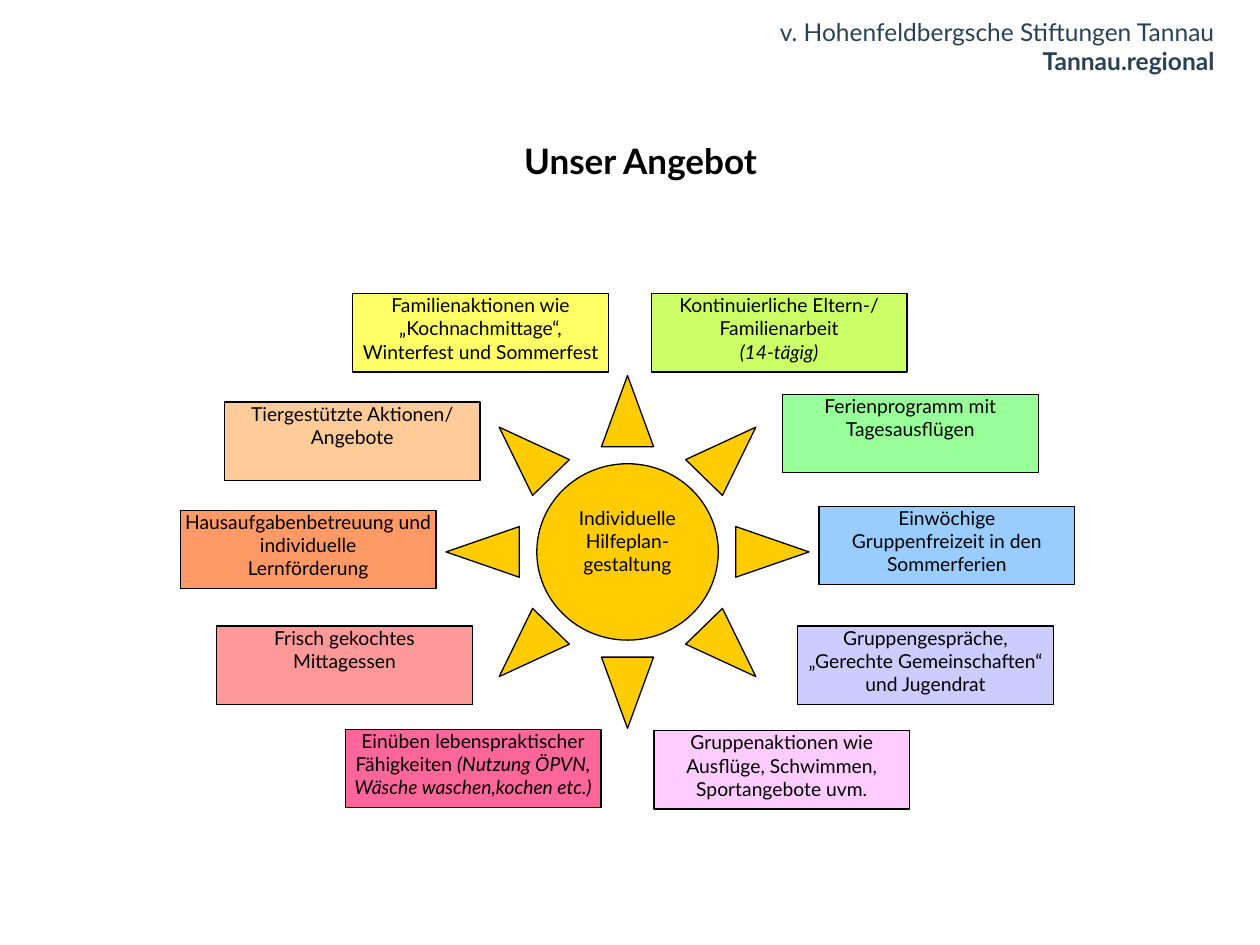
import pptx
import pptx.util
import pptx.dml.color
import pptx.enum.shapes
import pptx.enum.text
from dataclasses import dataclass

Pt = pptx.util.Pt
RGB = pptx.dml.color.RGBColor.from_string
SHAPE = pptx.enum.shapes.MSO_SHAPE
ALIGN = pptx.enum.text.PP_ALIGN
ANCHOR = pptx.enum.text.MSO_ANCHOR


@dataclass(frozen=True)
class Theme:
    font: str = "Lato"
    ink: str = "000000"
    header: str = "284156"
    sun: str = "FFCC00"
    title_size: int = 20
    header_size: int = 14
    body_size: int = 11
    line_width: float = 0.75


class Deck:
    def __init__(self, theme):
        self.theme = theme
        self.prs = pptx.Presentation()
        self.prs.slide_width, self.prs.slide_height = Pt(720), Pt(540)
        self.s = self.prs.slides.add_slide(self.prs.slide_layouts[5])

    def frame(self, sp, anchor):
        tf = sp.text_frame
        tf.word_wrap = True
        tf.auto_size = pptx.enum.text.MSO_AUTO_SIZE.NONE
        tf.margin_left = tf.margin_right = tf.margin_top = tf.margin_bottom = 0
        tf.vertical_anchor = anchor
        return tf

    def style(self, p, size, color, align):
        p.alignment = align
        p.font.name = self.theme.font
        p.font.size = Pt(size)
        p.font.color.rgb = RGB(color)

    def title(self, text, x, y, w, h):
        sp = self.s.shapes.title
        sp.left, sp.top, sp.width, sp.height = Pt(x), Pt(y), Pt(w), Pt(h)
        p = self.frame(sp, ANCHOR.BOTTOM).paragraphs[0]
        p.text = text
        self.style(p, self.theme.title_size, self.theme.ink, ALIGN.CENTER)
        p.font.bold = True

    def header(self, name, division, x, y, w, h):
        sp = self.s.shapes.add_textbox(Pt(x), Pt(y), Pt(w), Pt(h))
        p = self.frame(sp, ANCHOR.BOTTOM).paragraphs[0]
        self.style(p, self.theme.header_size, self.theme.header, ALIGN.RIGHT)
        p.add_run().text = name
        p.add_line_break()
        r = p.add_run()
        r.text = division
        r.font.bold = True

    def shape(self, kind, fill, x, y, w, h, outlined=True):
        sp = self.s.shapes.add_shape(kind, Pt(x), Pt(y), Pt(w), Pt(h))
        sp.shadow.inherit = False
        sp.fill.solid()
        sp.fill.fore_color.rgb = RGB(fill)
        if outlined:
            sp.line.color.rgb = RGB(self.theme.ink)
            sp.line.width = Pt(self.theme.line_width)
        else:
            sp.line.fill.background()
        return sp

    def label(self, lines, fill, x, y, w, h, outlined=True):
        sp = self.shape(SHAPE.RECTANGLE, fill, x, y, w, h, outlined)
        tf = self.frame(sp, ANCHOR.TOP)
        for i, line in enumerate(lines):
            p = tf.add_paragraph() if i else tf.paragraphs[0]
            self.style(p, self.theme.body_size, self.theme.ink, ALIGN.CENTER)
            plain, _, italic = line.partition("|")
            if plain:
                p.add_run().text = plain
            if italic:
                r = p.add_run()
                r.text = italic
                r.font.italic = True


BOX_SIZE = (146.2, 44.8)
OFFERS = [
    (372.2, 167.8, "CCFF66", ["Kontinuierliche Eltern-/", "Familienarbeit", "|(14-tägig)"]),
    (447.1, 225.4, "99FF99", ["Ferienprogramm mit", "Tagesausflügen"]),
    (468, 289.4, "99CCFF", ["Einwöchige", "Gruppenfreizeit in den", "Sommerferien"]),
    (103, 291.6, "FF9966", ["Hausaufgabenbetreuung und individuelle", "Lernförderung"]),
    (123.8, 357.8, "FF9999", ["Frisch gekochtes", "Mittagessen"]),
    (197.3, 416.9, "FF6699", ["Einüben lebenspraktischer",
                              "Fähigkeiten |(Nutzung ÖPVN, Wäsche waschen,kochen etc.)"]),
    (455.8, 357.8, "CCCCFF", ["Gruppengespräche,", "„Gerechte Gemeinschaften“ und Jugendrat"]),
    (201.6, 167.8, "FFFF66", ["Familienaktionen wie", "„Kochnachmittage“,",
                              "Winterfest und Sommerfest"]),
    (373.7, 417.6, "FFCCFF", ["Gruppenaktionen wie", "Ausflüge, Schwimmen,",
                              "Sportangebote uvm."]),
    (128.2, 229.7, "FFCC99", ["Tiergestützte Aktionen/", "Angebote"]),
]


def main():
    theme = Theme()
    deck = Deck(theme)
    deck.header("v. Hohenfeldbergsche Stiftungen Tannau", "Tannau.regional",
                297.4, 7.2, 396.7, 36)
    deck.title("Unser Angebot", 60, 69, 612, 35)
    deck.shape(SHAPE.SUN, theme.sun, 254.9, 214.6, 207.4, 201.6)
    for x, y, fill, lines in OFFERS:
        deck.label(lines, fill, x, y, *BOX_SIZE)
    deck.label(["Individuelle", "Hilfeplan-", "gestaltung"], theme.sun,
               324.7, 289.4, 67.7, 56.9, outlined=False)
    deck.prs.save("out.pptx")


if __name__ == "__main__":
    main()
